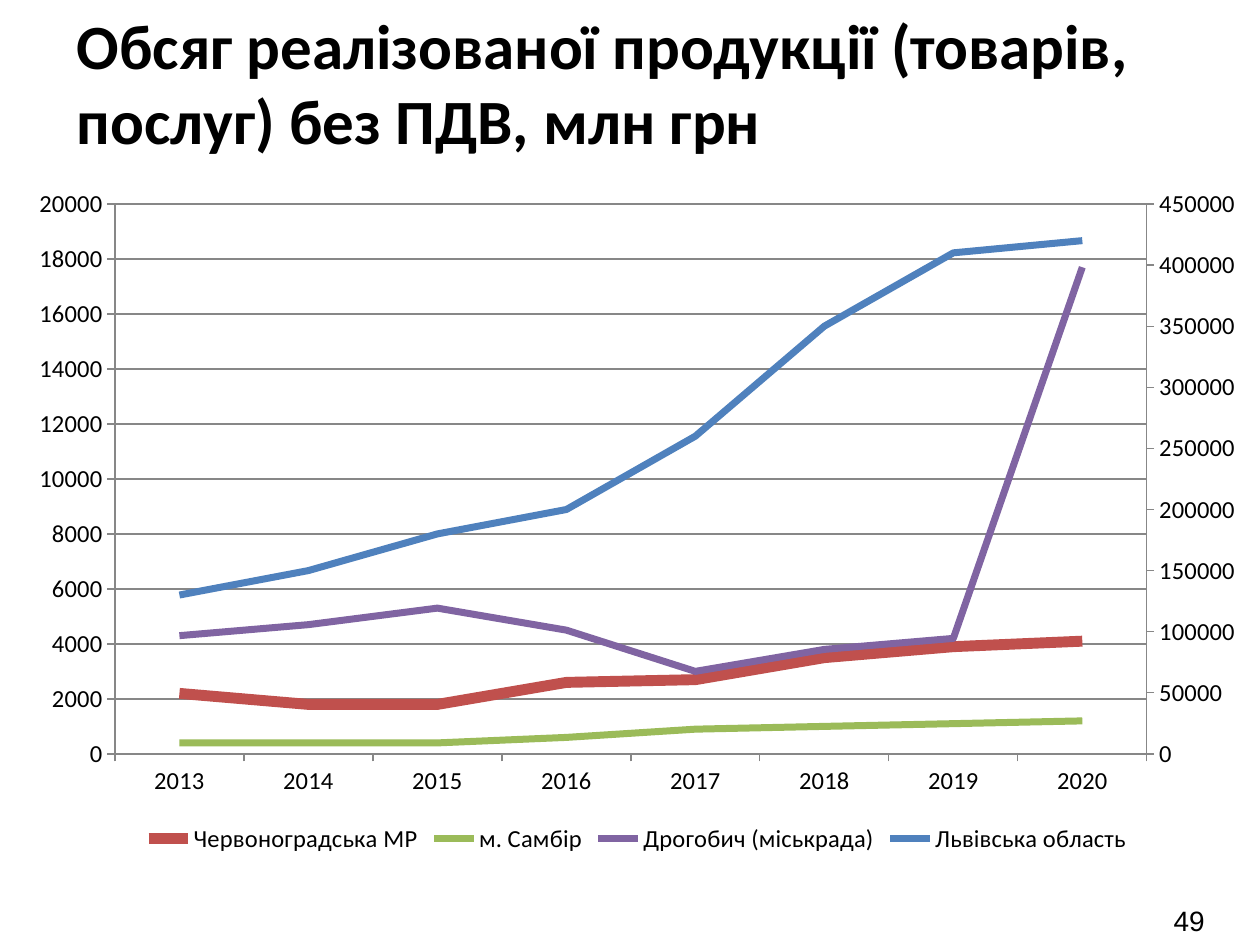
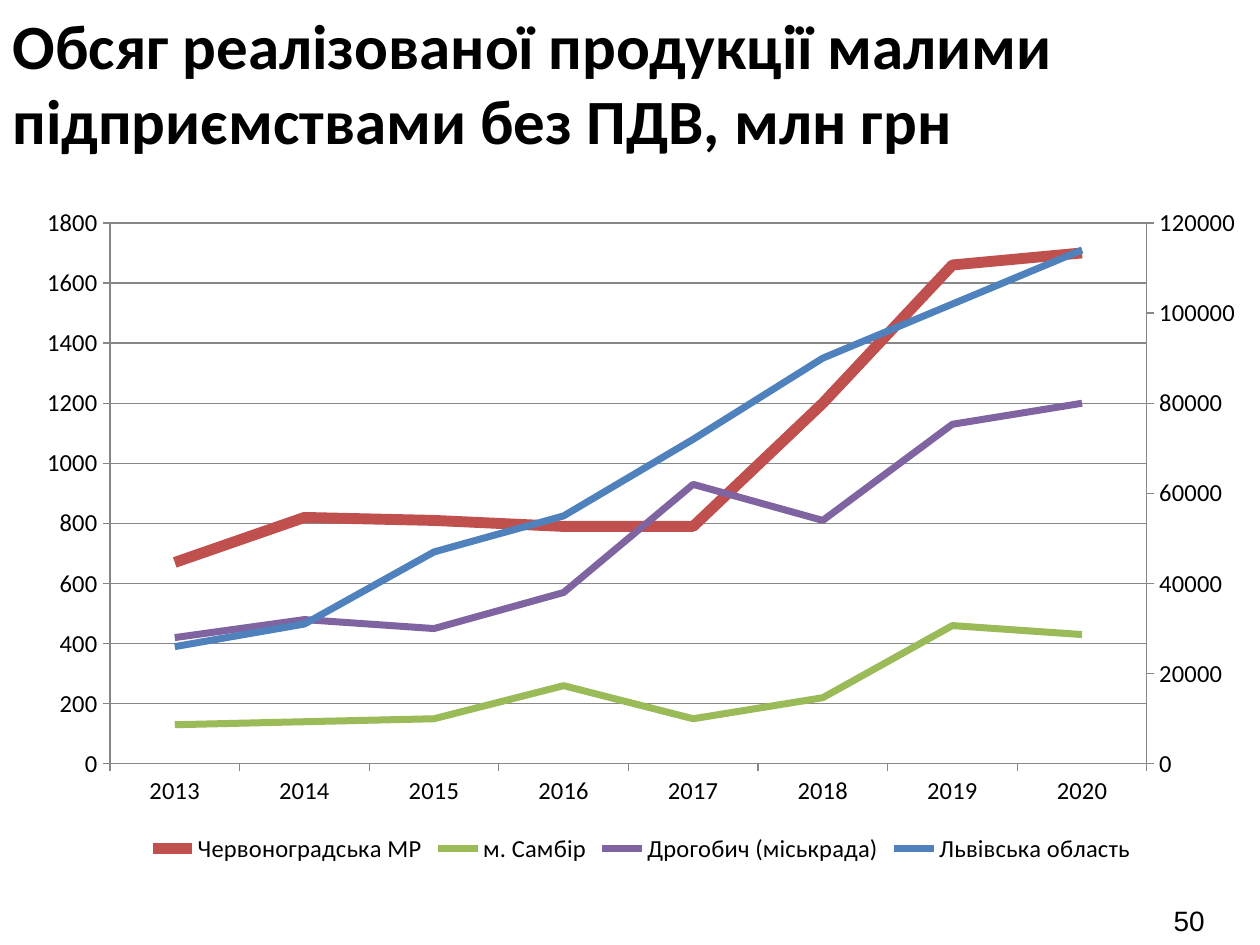
import copy

import pptx
import pptx.chart.data
import pptx.dml.color
import pptx.enum.chart
import pptx.enum.text
import pptx.oxml
import pptx.oxml.ns
import pptx.util

SLIDE_SIZE = (1260, 945)
NUMBER_BOX = (924, 895, 293, 50)
BLACK = "000000"
AXIS_GRAY = "878787"

YEARS = [str(year) for year in range(2013, 2021)]
SERIES_STYLES = [
    ("Червоноградська МР", "C0504D", 6.25),
    ("м. Самбір", "9BBB59", 4),
    ("Дрогобич (міськрада)", "8064A2", 4),
    ("Львівська область", "4F81BD", 4),
]

SLIDES = [
    {
        "title": "Обсяг реалізованої продукції (товарів, послуг) без ПДВ, млн грн",
        "number": "49",
        "title_box": (64, 0, 1150, 165),
        "chart_box": (15, 175, 1245, 684),
        "plot_box": (115, 204, 1032, 550),
        "left_scale": (20000, 2000),
        "right_scale": (450000, 50000),
        "values": [
            (2200, 1800, 1800, 2600, 2700, 3500, 3900, 4100),
            (400, 400, 400, 600, 900, 1000, 1100, 1200),
            (4300, 4700, 5300, 4500, 3000, 3800, 4200, 17700),
            (130000, 150000, 180000, 200000, 260000, 350000, 410000, 420000),
        ],
    },
    {
        "title": "Обсяг реалізованої продукції малими підприємствами без ПДВ, млн грн",
        "number": "50",
        "title_box": (0, 0, 1260, 165),
        "chart_box": (23, 195, 1237, 674),
        "plot_box": (110, 223, 1037, 541),
        "left_scale": (1800, 200),
        "right_scale": (120000, 20000),
        "values": [
            (670, 820, 810, 790, 790, 1200, 1660, 1700),
            (130, 140, 150, 260, 150, 220, 460, 430),
            (420, 480, 450, 570, 930, 810, 1130, 1200),
            (26000, 31000, 47000, 55000, 72000, 90000, 102000, 114000),
        ],
    },
]


def px(length):
    return pptx.util.Emu(round(length * 914400 / 126))


def color(hex_string):
    return pptx.dml.color.RGBColor.from_string(hex_string)


def tag(name):
    return pptx.oxml.ns.qn("c:" + name)


def place(shape, box):
    shape.left, shape.top, shape.width, shape.height = map(px, box)


def write(shape, text, font_name, size, bold, alignment, anchor):
    frame = shape.text_frame
    frame.word_wrap = True
    frame.auto_size = pptx.enum.text.MSO_AUTO_SIZE.NONE
    frame.vertical_anchor = anchor
    paragraph = frame.paragraphs[0]
    paragraph.alignment = alignment
    run = paragraph.add_run()
    run.text = text
    run.font.name = font_name
    run.font.size = pptx.util.Pt(size)
    run.font.bold = bold
    run.font.color.rgb = color(BLACK)


def style_line(line, hex_string, width):
    line.color.rgb = color(hex_string)
    line.width = pptx.util.Pt(width)


def set_scale(axis, scale):
    axis.minimum_scale = 0
    axis.maximum_scale, axis.major_unit = scale


def format_axes(chart, scale):
    for axis in (chart.category_axis, chart.value_axis):
        axis.major_tick_mark = pptx.enum.chart.XL_TICK_MARK.OUTSIDE
        axis.minor_tick_mark = pptx.enum.chart.XL_TICK_MARK.NONE
        style_line(axis.format.line, AXIS_GRAY, 0.75)
    value_axis = chart.value_axis
    set_scale(value_axis, scale)
    value_axis.tick_labels.number_format = "0"
    value_axis.tick_labels.number_format_is_linked = False
    value_axis.has_major_gridlines = True
    style_line(value_axis.major_gridlines.format.line, AXIS_GRAY, 0.75)


def add_right_axis(chart, scale):
    plot_area = chart.element.find(".//" + tag("plotArea"))
    left_plot = plot_area.find(tag("lineChart"))
    right_plot = copy.deepcopy(left_plot)
    left_plot.remove(left_plot.findall(tag("ser"))[-1])
    for series in right_plot.findall(tag("ser"))[:-1]:
        right_plot.remove(series)
    left_plot.addnext(right_plot)

    category_axis = copy.deepcopy(plot_area.find(tag("catAx")))
    value_axis = copy.deepcopy(plot_area.find(tag("valAx")))
    category_axis.find(tag("delete")).set("val", "1")
    value_axis.find(tag("axPos")).set("val", "r")
    value_axis.find(tag("crosses")).set("val", "max")
    value_axis.remove(value_axis.find(tag("majorGridlines")))
    plot_area.findall(tag("valAx"))[-1].addnext(value_axis)
    value_axis.addnext(category_axis)

    category_id, value_id = "50010", "50020"
    for reference, axis_id in zip(right_plot.findall(tag("axId")), (category_id, value_id)):
        reference.set("val", axis_id)
    for axis, own_id, cross_id in (
        (category_axis, category_id, value_id),
        (value_axis, value_id, category_id),
    ):
        axis.find(tag("axId")).set("val", own_id)
        axis.find(tag("crossAx")).set("val", cross_id)
    set_scale(pptx.chart.axis.ValueAxis(value_axis), scale)


def set_plot_layout(chart, chart_box, plot_box):
    left, top, width, height = chart_box
    plot_left, plot_top, plot_width, plot_height = plot_box
    fractions = {
        "x": (plot_left - left) / width,
        "y": (plot_top - top) / height,
        "w": plot_width / width,
        "h": plot_height / height,
    }
    entries = "".join(f'<c:{key} val="{value:.4f}"/>' for key, value in fractions.items())
    layout = pptx.oxml.parse_xml(
        f'<c:layout {pptx.oxml.ns.nsdecls("c")}><c:manualLayout>'
        '<c:layoutTarget val="inner"/><c:xMode val="edge"/><c:yMode val="edge"/>'
        f"{entries}</c:manualLayout></c:layout>"
    )
    plot_area = chart.element.find(".//" + tag("plotArea"))
    for old_layout in plot_area.findall(tag("layout")):
        plot_area.remove(old_layout)
    plot_area.insert(0, layout)


def add_sales_chart(slide, content):
    data = pptx.chart.data.CategoryChartData()
    data.categories = YEARS
    for (name, _, _), values in zip(SERIES_STYLES, content["values"]):
        data.add_series(name, values)
    chart = slide.shapes.add_chart(
        pptx.enum.chart.XL_CHART_TYPE.LINE, *map(px, content["chart_box"]), data
    ).chart
    chart.has_title = False
    chart.font.name = "Calibri"
    chart.font.size = pptx.util.Pt(14)
    chart.font.color.rgb = color(BLACK)
    chart.has_legend = True
    chart.legend.position = pptx.enum.chart.XL_LEGEND_POSITION.BOTTOM
    chart.legend.include_in_layout = False
    plot = chart.plots[0]
    plot.vary_by_categories = False
    for series, (_, hex_string, width) in zip(plot.series, SERIES_STYLES):
        series.smooth = False
        series.marker.style = pptx.enum.chart.XL_MARKER_STYLE.NONE
        style_line(series.format.line, hex_string, width)
    format_axes(chart, content["left_scale"])
    add_right_axis(chart, content["right_scale"])
    set_plot_layout(chart, content["chart_box"], content["plot_box"])


def add_slide(presentation, content):
    slide = presentation.slides.add_slide(presentation.slide_layouts[5])
    title = slide.shapes.title
    place(title, content["title_box"])
    write(title, content["title"], "Calibri", 36, True,
          pptx.enum.text.PP_ALIGN.LEFT, pptx.enum.text.MSO_ANCHOR.TOP)
    add_sales_chart(slide, content)
    number = slide.shapes.add_textbox(*map(px, NUMBER_BOX))
    write(number, content["number"], "Arial", 16, False,
          pptx.enum.text.PP_ALIGN.RIGHT, pptx.enum.text.MSO_ANCHOR.MIDDLE)


def main():
    presentation = pptx.Presentation()
    presentation.slide_width, presentation.slide_height = map(px, SLIDE_SIZE)
    for content in SLIDES:
        add_slide(presentation, content)
    presentation.save("out.pptx")


if __name__ == "__main__":
    main()
